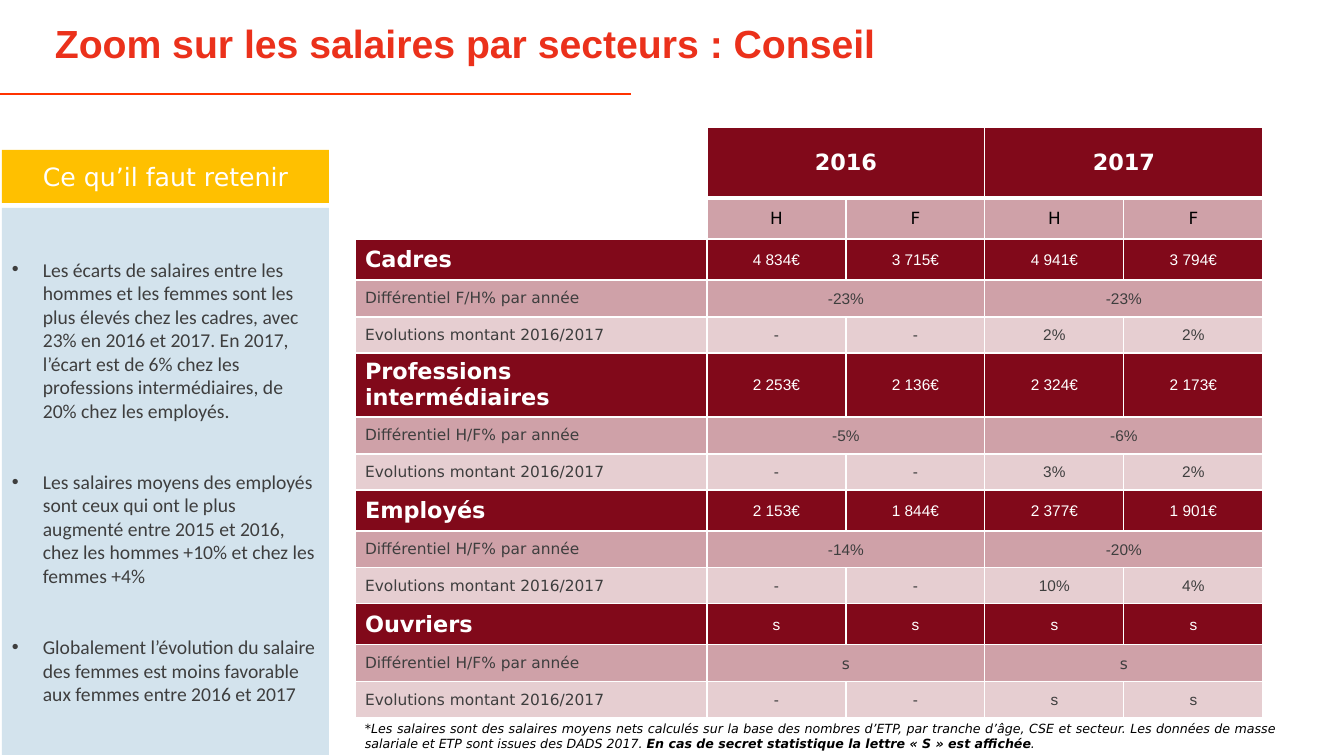
"""Builds the slide on consulting salaries by sector for 2016 and 2017."""
from lxml.etree import SubElement
from pptx import Presentation
from pptx.dml.color import RGBColor
from pptx.enum.shapes import MSO_CONNECTOR, MSO_SHAPE
from pptx.enum.text import MSO_ANCHOR, PP_ALIGN
from pptx.oxml.ns import qn
from pptx.util import Pt

TITLE = "Zoom sur les salaires par secteurs : Conseil"
TAKEAWAY_HEADING = "Ce qu’il faut retenir"
TAKEAWAYS = [
    "Les écarts de salaires entre les hommes et les femmes sont les plus élevés chez les cadres, "
    "avec 23% en 2016 et 2017. En 2017, l’écart est de 6% chez les professions intermédiaires, "
    "de 20% chez les employés.",
    "Les salaires moyens des employés sont ceux qui ont le plus augmenté entre 2015 et 2016, "
    "chez les hommes +10% et chez les femmes +4%",
    "Globalement l’évolution du salaire des femmes est moins favorable aux femmes entre 2016 et 2017",
]
YEARS = ["2016", "2017"]
SEXES = ["H", "F"]
CATEGORIES = [
    ("Cadres", ["4 834€", "3 715€", "4 941€", "3 794€"],
     "Différentiel F/H% par année", ["-23%", "-23%"], ["-", "-", "2%", "2%"]),
    ("Professions intermédiaires", ["2 253€", "2 136€", "2 324€", "2 173€"],
     "Différentiel H/F% par année", ["-5%", "-6%"], ["-", "-", "3%", "2%"]),
    ("Employés", ["2 153€", "1 844€", "2 377€", "1 901€"],
     "Différentiel H/F% par année", ["-14%", "-20%"], ["-", "-", "10%", "4%"]),
    ("Ouvriers", ["s", "s", "s", "s"],
     "Différentiel H/F% par année", ["s", "s"], ["-", "-", "s", "s"]),
]
EVOLUTION = "Evolutions montant 2016/2017"
NOTE = [
    ("*Les salaires sont des salaires moyens nets calculés sur la base des nombres d’ETP, par tranche "
     "d’âge, CSE et secteur. Les données de masse salariale et ETP sont issues des DADS 2017. ", False),
    ("En cas de secret statistique la lettre « S » est affichée", True),
    (".", False),
]

WHITE = RGBColor(0xFF, 0xFF, 0xFF)
BLACK = RGBColor(0, 0, 0)
GREY = RGBColor(0x3E, 0x3E, 0x3E)
RED = RGBColor(0xEB, 0x31, 0x1B)
RULE_RED = RGBColor(0xFF, 0x33, 0x00)
AMBER = RGBColor(0xFF, 0xC0, 0x00)
PALE_BLUE = RGBColor(0xD3, 0xE3, 0xED)
BURGUNDY = RGBColor(0x81, 0x09, 0x1A)
ROSE = RGBColor(0xCF, 0xA1, 0xA8)
PALE_ROSE = RGBColor(0xE6, 0xCE, 0xD1)
SANS, ARIAL, CALIBRI = "DejaVu Sans", "Arial", "Calibri"

YEAR_FORMAT = {"name": SANS, "size": Pt(16), "bold": True, "color": WHITE}
SEX_FORMAT = {"name": SANS, "size": Pt(12), "bold": False, "color": BLACK}
SALARY_FORMAT = {"name": ARIAL, "size": Pt(11), "bold": False, "color": WHITE}
LABEL_FORMAT = {"name": SANS, "size": Pt(11), "bold": False, "color": GREY}
RATE_FORMAT = {**LABEL_FORMAT, "name": ARIAL}

COLUMN_WIDTHS = [352] + [139] * 4
HEADER_HEIGHTS = [71, 41]
CATEGORY_HEIGHT, TALL_HEIGHT = 41, 64
DETAIL_HEIGHTS = [37, 36]
EMU_PER_PX = 914400 / 100.8


def px(length):
    return round(length * EMU_PER_PX)


def box(left, top, width, height):
    return [px(length) for length in (left, top, width, height)]


def write(paragraph, text, values):
    run = paragraph.add_run()
    run.text = text
    for key, value in values.items():
        if key == "color":
            run.font.color.rgb = value
        else:
            setattr(run.font, key, value)


def add_panel(shapes, place, color):
    panel = shapes.add_shape(MSO_SHAPE.RECTANGLE, *box(*place))
    panel.shadow.inherit = False
    panel.fill.solid()
    panel.fill.fore_color.rgb = color
    panel.line.fill.background()
    panel.text_frame.word_wrap = True
    panel.text_frame.vertical_anchor = MSO_ANCHOR.MIDDLE
    return panel.text_frame


def add_text(shapes, place):
    frame = shapes.add_textbox(*box(*place)).text_frame
    frame.word_wrap = True
    return frame


def add_bullet(paragraph):
    properties = paragraph._p.get_or_add_pPr()
    properties.set("marL", str(px(31)))
    properties.set("indent", str(-px(31)))
    SubElement(properties, qn("a:buFont"), typeface="Arial")
    SubElement(properties, qn("a:buChar"), char="•")


def add_borders(cell, bottom):
    properties = cell._tc.get_or_add_tcPr()
    for position, (side, width) in enumerate({"lnL": 1, "lnR": 1, "lnT": 1, "lnB": bottom}.items()):
        border = SubElement(properties, qn(f"a:{side}"), w=str(Pt(width)))
        fill = SubElement(border, qn("a:solidFill"))
        SubElement(fill, qn("a:srgbClr"), val=str(WHITE))
        properties.insert(position, border)


def fill_cell(cell, text, color, values, align=PP_ALIGN.CENTER):
    cell.fill.solid()
    cell.fill.fore_color.rgb = color
    cell.vertical_anchor = MSO_ANCHOR.MIDDLE
    if align == PP_ALIGN.CENTER:
        cell.margin_left = cell.margin_right = cell.margin_top = px(1)
        cell.margin_bottom = 0
    paragraph = cell.text_frame.paragraphs[0]
    paragraph.alignment = align
    write(paragraph, text, values)


def table_rows():
    rows = [("", YEARS, BURGUNDY, YEAR_FORMAT, YEAR_FORMAT, HEADER_HEIGHTS[0]),
            ("", SEXES * len(YEARS), ROSE, SEX_FORMAT, SEX_FORMAT, HEADER_HEIGHTS[1])]
    for category, salaries, gap_label, gaps, evolutions in CATEGORIES:
        height = TALL_HEIGHT if " " in category else CATEGORY_HEIGHT
        gap_format = LABEL_FORMAT if "s" in gaps else RATE_FORMAT
        rows += [(category, salaries, BURGUNDY, YEAR_FORMAT, SALARY_FORMAT, height),
                 (gap_label, gaps, ROSE, LABEL_FORMAT, gap_format, DETAIL_HEIGHTS[0]),
                 (EVOLUTION, evolutions, PALE_ROSE, LABEL_FORMAT, RATE_FORMAT, DETAIL_HEIGHTS[1])]
    return rows


def add_salaries(shapes):
    rows = table_rows()
    place = box(355, 127, sum(COLUMN_WIDTHS), sum(row[-1] for row in rows))
    salaries = shapes.add_table(len(rows), len(COLUMN_WIDTHS), *place).table
    salaries.first_row = salaries.horz_banding = False
    for column, width in zip(salaries.columns, COLUMN_WIDTHS):
        column.width = px(width)
    for index, (label, values, color, label_format, value_format, height) in enumerate(rows):
        salaries.rows[index].height = px(height)
        if label:
            fill_cell(salaries.cell(index, 0), label, color, label_format, PP_ALIGN.LEFT)
        else:
            salaries.cell(index, 0).fill.background()
        span = (len(COLUMN_WIDTHS) - 1) // len(values)
        for order, value in enumerate(values):
            first = 1 + order * span
            cell = salaries.cell(index, first)
            if span > 1:
                cell.merge(salaries.cell(index, first + span - 1))
            fill_cell(cell, value, color, value_format)
        for column in range(len(COLUMN_WIDTHS)):
            add_borders(salaries.cell(index, column), 1 if index else 3)


def main():
    deck = Presentation()
    deck.slide_width, deck.slide_height = px(1344), px(756)
    shapes = deck.slides.add_slide(deck.slide_layouts[6]).shapes

    rule = shapes.add_connector(MSO_CONNECTOR.STRAIGHT, *box(0, 94, 631, 94))
    rule.line.color.rgb = RULE_RED
    rule.line.width = Pt(1.5)
    SubElement(rule._element.spPr, qn("a:effectLst"))

    title = add_text(shapes, (45, 9, 1210, 74))
    title.vertical_anchor = MSO_ANCHOR.MIDDLE
    title.paragraphs[0].line_spacing = 0.9
    write(title.paragraphs[0], TITLE, {"name": ARIAL, "size": Pt(28), "bold": True, "color": RED})

    heading = add_panel(shapes, (2, 150, 327, 53), AMBER).paragraphs[0]
    heading.alignment = PP_ALIGN.CENTER
    write(heading, TAKEAWAY_HEADING, {"name": SANS, "size": Pt(18), "color": WHITE})

    takeaways = add_panel(shapes, (2, 208, 327, 547), PALE_BLUE)
    for order, takeaway in enumerate(TAKEAWAYS):
        paragraph = takeaways.add_paragraph() if order else takeaways.paragraphs[0]
        paragraph.alignment = PP_ALIGN.LEFT
        paragraph.space_before = Pt(34 if order else 0)
        add_bullet(paragraph)
        write(paragraph, takeaway, {"name": CALIBRI, "size": Pt(14), "color": GREY})

    note = add_text(shapes, (355, 716, 930, 40)).paragraphs[0]
    note.alignment = PP_ALIGN.JUSTIFY
    for text, bold in NOTE:
        write(note, text, {"name": SANS, "size": Pt(9), "italic": True, "bold": bold, "color": BLACK})

    add_salaries(shapes)
    deck.save("out.pptx")


if __name__ == "__main__":
    main()
